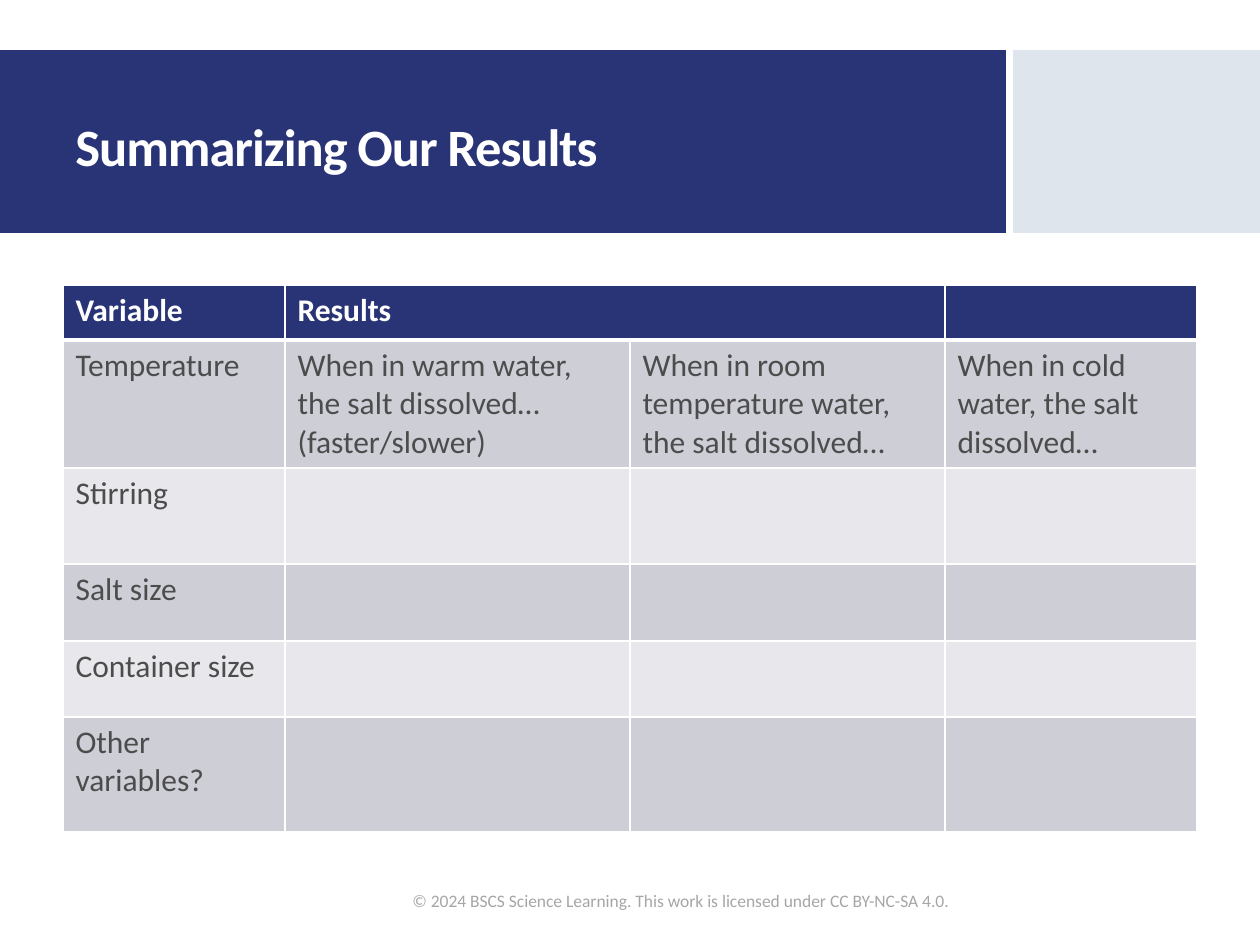
from dataclasses import dataclass

from lxml import etree
from pptx import Presentation
from pptx.dml.color import RGBColor
from pptx.enum.shapes import MSO_SHAPE
from pptx.enum.text import MSO_ANCHOR
from pptx.oxml.ns import qn
from pptx.slide import Slide
from pptx.table import Table, _Cell
from pptx.text.text import _Paragraph
from pptx.util import Pt

RECTANGLE = MSO_SHAPE.RECTANGLE
MIDDLE = MSO_ANCHOR.MIDDLE
EMU_PER_PX = 914400 / 126
FONT = "Calibri"
COLORS = {
    "navy": "293476",
    "mist": "DFE5ED",
    "white": "FFFFFF",
    "text": "4C4C4C",
    "dark band": "CDCED6",
    "light band": "E8E8EC",
    "footer": "A6A6A6",
}


@dataclass(frozen=True)
class Box:
    left: int
    top: int
    width: int
    height: int

    def emu(self) -> tuple[int, ...]:
        return tuple(px(v) for v in (self.left, self.top, self.width, self.height))


@dataclass(frozen=True)
class Style:
    size: int
    color: str
    bold: bool = False
    tracking: int = 0
    line_spacing: float = 1.0


@dataclass(frozen=True)
class Banner:
    box: Box
    color: str


@dataclass(frozen=True)
class Label:
    box: Box
    text: str
    style: Style


BANNERS = [
    Banner(Box(0, 50, 1006, 183), "navy"),
    Banner(Box(1013, 50, 247, 183), "mist"),
]
LABELS = [
    Label(Box(63, 73, 873, 154), "Summarizing Our Results",
          Style(30, "white", True, -60, 0.9)),
    Label(Box(400, 876, 611, 50),
          "© 2024 BSCS Science Learning. This work is licensed under CC BY-NC-SA 4.0.",
          Style(10, "footer")),
]
HEADER_STYLE = Style(18, "white", True)
BODY_STYLE = Style(18, "text")
TABLE_LEFT, TABLE_TOP = 63, 285
COLUMN_WIDTHS = [222, 345, 315, 252]
ROW_HEIGHTS = [55, 128, 96, 77, 76, 115]
ROWS = [
    ["Variable", "Results"],
    ["Temperature", "When in warm water, the salt dissolved… (faster/slower)",
     "When in room temperature water, the salt dissolved…",
     "When in cold water, the salt dissolved…"],
    ["Stirring"],
    ["Salt size"],
    ["Container size"],
    ["Other variables?"],
]


def px(value: int) -> int:
    return round(value * EMU_PER_PX)


def rgb(name: str) -> RGBColor:
    return RGBColor.from_string(COLORS[name])


def style_paragraph(paragraph: _Paragraph, style: Style) -> None:
    paragraph.line_spacing = style.line_spacing
    font = paragraph.font
    font.name = FONT
    font.size = Pt(style.size)
    font.bold = style.bold
    font.color.rgb = rgb(style.color)
    if style.tracking:
        properties = paragraph._p.get_or_add_pPr().find(qn("a:defRPr"))
        properties.set("spc", str(style.tracking))


def add_banner(slide: Slide, banner: Banner) -> None:
    shape = slide.shapes.add_shape(RECTANGLE, *banner.box.emu())
    shape.shadow.inherit = False
    shape.fill.solid()
    shape.fill.fore_color.rgb = rgb(banner.color)
    shape.line.fill.background()


def add_label(slide: Slide, label: Label) -> None:
    text_frame = slide.shapes.add_textbox(*label.box.emu()).text_frame
    text_frame.word_wrap = True
    text_frame.vertical_anchor = MIDDLE
    text_frame.text = label.text
    style_paragraph(text_frame.paragraphs[0], label.style)


def add_borders(cell: _Cell, widths: dict[str, int]) -> None:
    properties = cell._tc.get_or_add_tcPr()
    for side, width in widths.items():
        line = etree.SubElement(properties, qn(f"a:ln{side}"), w=str(Pt(width)))
        fill = etree.SubElement(line, qn("a:solidFill"))
        etree.SubElement(fill, qn("a:srgbClr"), val=COLORS["white"])


def fill_cell(cell: _Cell, text: str, row: int) -> None:
    add_borders(cell, {"L": 1, "R": 1, "T": 3 if row == 1 else 1, "B": 3 if row == 0 else 1})
    band = "navy" if row == 0 else "dark band" if row % 2 else "light band"
    cell.fill.solid()
    cell.fill.fore_color.rgb = rgb(band)
    cell.text = text
    style_paragraph(cell.text_frame.paragraphs[0], BODY_STYLE if row else HEADER_STYLE)


def add_results_table(slide: Slide) -> Table:
    box = Box(TABLE_LEFT, TABLE_TOP, sum(COLUMN_WIDTHS), sum(ROW_HEIGHTS))
    table = slide.shapes.add_table(len(ROWS), len(COLUMN_WIDTHS), *box.emu()).table
    table.first_row = True
    table.horz_banding = False
    for column, width in zip(table.columns, COLUMN_WIDTHS):
        column.width = px(width)
    for row, (texts, height) in enumerate(zip(ROWS, ROW_HEIGHTS)):
        table.rows[row].height = px(height)
        for column in range(len(COLUMN_WIDTHS)):
            text = texts[column] if column < len(texts) else ""
            fill_cell(table.cell(row, column), text, row)
    table.cell(0, 1).merge(table.cell(0, 2))
    return table


def main() -> None:
    presentation = Presentation()
    presentation.slide_width = px(1260)
    presentation.slide_height = px(945)
    slide = presentation.slides.add_slide(presentation.slide_layouts[6])
    for banner in BANNERS:
        add_banner(slide, banner)
    for label in LABELS:
        add_label(slide, label)
    add_results_table(slide)
    presentation.save("out.pptx")


if __name__ == "__main__":
    main()
